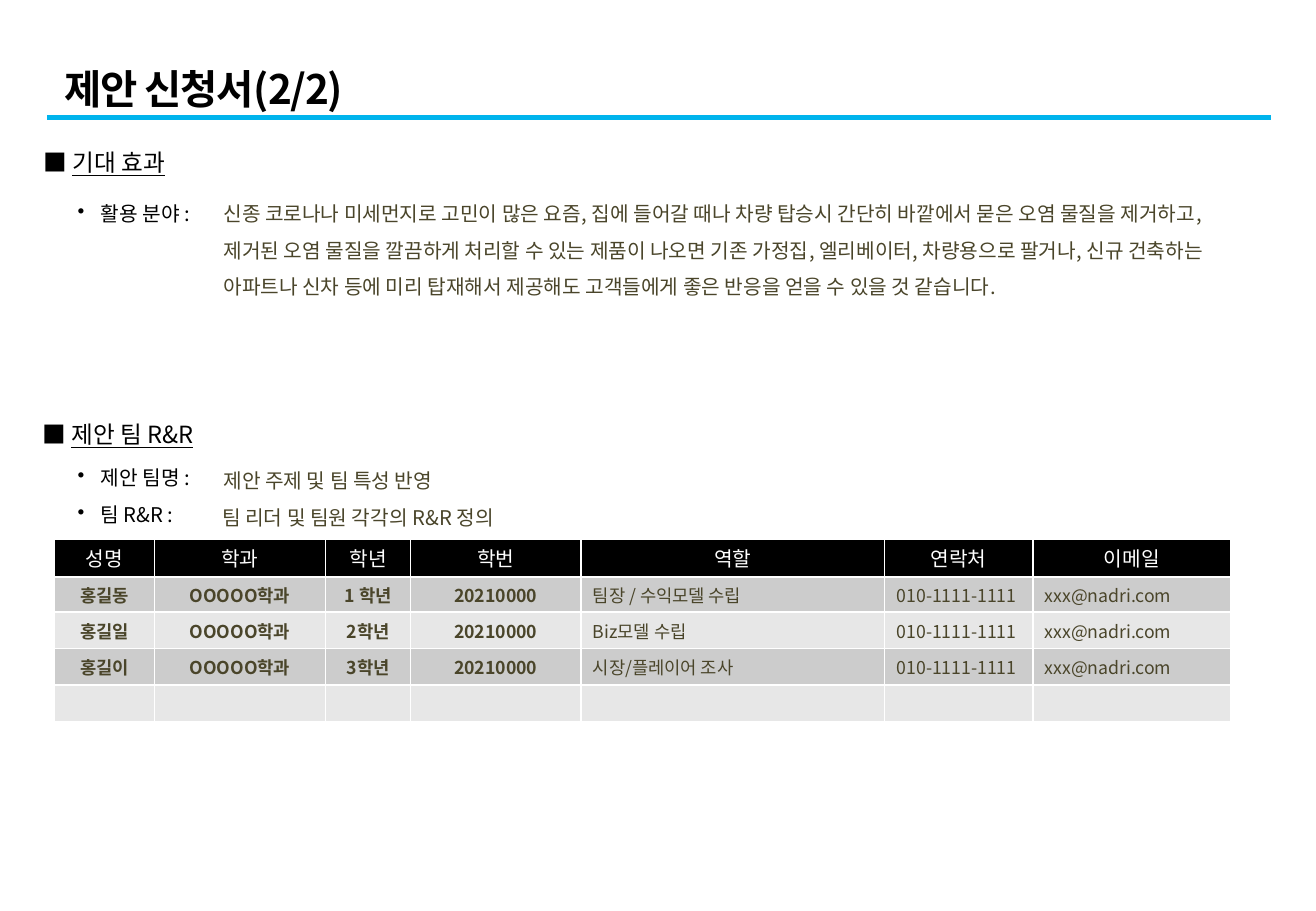
"""Build the second page of the proposal form."""
from lxml import etree
from pptx import Presentation
from pptx.dml.color import RGBColor
from pptx.enum.shapes import MSO_CONNECTOR
from pptx.enum.text import MSO_ANCHOR, PP_ALIGN
from pptx.oxml.ns import qn
from pptx.util import Pt

LINE = MSO_CONNECTOR.STRAIGHT
MID = MSO_ANCHOR.MIDDLE
LEFT, CENTER = PP_ALIGN.LEFT, PP_ALIGN.CENTER
PX = 9144
FACE = "Noto Sans CJK KR"
BLACK, WHITE, OLIVE, CYAN = "000000", "FFFFFF", "4A452A", "00B4ED"
BANDS = ["CCCCCC", "E7E7E7"]

TITLE = {"size": 24, "color": BLACK, "bold": True}
HEAD = {"size": 14, "color": BLACK}
LABEL = {"size": 12, "color": BLACK}
BODY = {"size": 12, "color": OLIVE}
TOP = {"size": 12, "color": WHITE, "bold": False}
CELL = {"size": 10.5, "color": OLIVE}

HEADS = [
    ("기대 효과", (26, 117, 596, 34)),
    ("제안 팀 R&R", (25, 341, 230, 34)),
]
LABELS = [
    ("활용 분야 :", (54, 151, 153, 40)),
    ("제안 팀명 :", (54, 368, 124, 40)),
    ("팀 R&R :", (54, 399, 124, 40)),
]
BODIES = [
    ("신종 코로나나 미세먼지로 고민이 많은 요즘, 집에 들어갈 때나 차량 탑승시 간단히 "
     "바깥에서 묻은 오염 물질을 제거하고, 제거된 오염 물질을 깔끔하게 처리할 수 있는 "
     "제품이 나오면 기존 가정집, 엘리베이터, 차량용으로 팔거나, 신규 건축하는 아파트나 "
     "신차 등에 미리 탑재해서 제공해도 고객들에게 좋은 반응을 얻을 수 있을 것 같습니다.",
     (174, 151, 872, 131)),
    ("제안 주제 및 팀 특성 반영", (174, 371, 861, 40)),
    ("팀 리더 및 팀원 각각의 R&R 정의", (173, 401, 861, 40)),
]
COLS = [("성명", 82), ("학과", 141), ("학년", 70), ("학번", 140),
        ("역할", 250), ("연락처", 122), ("이메일", 163)]
TEAM = [
    ("홍길동", "1 학년", "팀장 / 수익모델 수립"),
    ("홍길일", "2학년", "Biz모델 수립"),
    ("홍길이", "3학년", "시장/플레이어 조사"),
]
ROWS = [[name, "OOOOO학과", year, "20210000", role, "010-1111-1111", "xxx@nadri.com"]
        for name, year, role in TEAM] + [[""] * len(COLS)]
HIGHS = [31, 29, 30, 30, 30]
BOLD = 4


def rgb(code):
    return RGBColor.from_string(code)


def write(para, text, look, **more):
    run = para.add_run()
    run.text = text
    form = {**look, **more}
    font = run.font
    font.color.rgb = rgb(form.pop("color"))
    form["size"] = Pt(form["size"])
    form["name"] = FACE
    for key, val in form.items():
        setattr(font, key, val)
    props = run._r.get_or_add_rPr()
    etree.SubElement(props, qn("a:ea"), typeface=FACE)
    return props


def box(slide, spot):
    frame = slide.shapes.add_textbox(*(n * PX for n in spot)).text_frame
    frame.word_wrap = True
    return frame


def bullet(para):
    props = para._p.get_or_add_pPr()
    props.set("marL", str(19 * PX))
    props.set("indent", str(-19 * PX))
    etree.SubElement(props, qn("a:buChar"), char="•")


def add_title(slide):
    rule = slide.shapes.add_connector(LINE, 39 * PX, 97 * PX, 1046 * PX, 97 * PX)
    rule.line.color.rgb = rgb(CYAN)
    rule.line.width = Pt(3)
    etree.SubElement(rule._element.spPr, qn("a:effectLst"))
    frame = box(slide, (45, 46, 1008, 53))
    edges = {"margin_left": 8 * PX, "margin_top": 0, "margin_right": 0,
             "margin_bottom": 0, "vertical_anchor": MID}
    for key, val in edges.items():
        setattr(frame, key, val)
    write(frame.paragraphs[0], "제안 신청서(2/2)", TITLE).set("spc", "-70")


def add_text(slide):
    for text, spot in HEADS:
        para = box(slide, spot).paragraphs[0]
        write(para, "■ ", HEAD)
        write(para, text, HEAD, underline=True)
    for items, look in ((LABELS, LABEL), (BODIES, BODY)):
        for text, spot in items:
            para = box(slide, spot).paragraphs[0]
            para.line_spacing = 1.5
            if look is LABEL:
                bullet(para)
            write(para, text, look)


def fill_cell(cell, text, back, look, align):
    cell.fill.solid()
    cell.fill.fore_color.rgb = rgb(back)
    form = {"margin_top": 3 * PX, "margin_bottom": 3 * PX, "vertical_anchor": MID}
    for key, val in form.items():
        setattr(cell, key, val)
    para = cell.text_frame.paragraphs[0]
    para.alignment = align
    if text:
        write(para, text, look)
    else:
        size = str(int(look["size"] * 100))
        etree.SubElement(para._p, qn("a:endParaRPr"), sz=size)


def add_team(slide):
    wide = sum(width for _, width in COLS)
    spot = (45, 444, wide, sum(HIGHS))
    grid = slide.shapes.add_table(len(HIGHS), len(COLS), *(n * PX for n in spot)).table
    for col, (name, width) in enumerate(COLS):
        grid.columns[col].width = width * PX
        fill_cell(grid.cell(0, col), name, BLACK, TOP, CENTER)
    for row, high in enumerate(HIGHS):
        grid.rows[row].height = high * PX
    for row, texts in enumerate(ROWS):
        for col, text in enumerate(texts):
            bold = col < BOLD
            fill_cell(grid.cell(row + 1, col), text, BANDS[row % 2],
                      {**CELL, "bold": bold}, CENTER if bold else LEFT)


def main():
    deck = Presentation()
    deck.slide_width, deck.slide_height = 1083 * PX, 750 * PX
    slide = deck.slides.add_slide(deck.slide_layouts[6])
    add_title(slide)
    add_text(slide)
    add_team(slide)
    deck.save("out.pptx")


if __name__ == "__main__":
    main()
